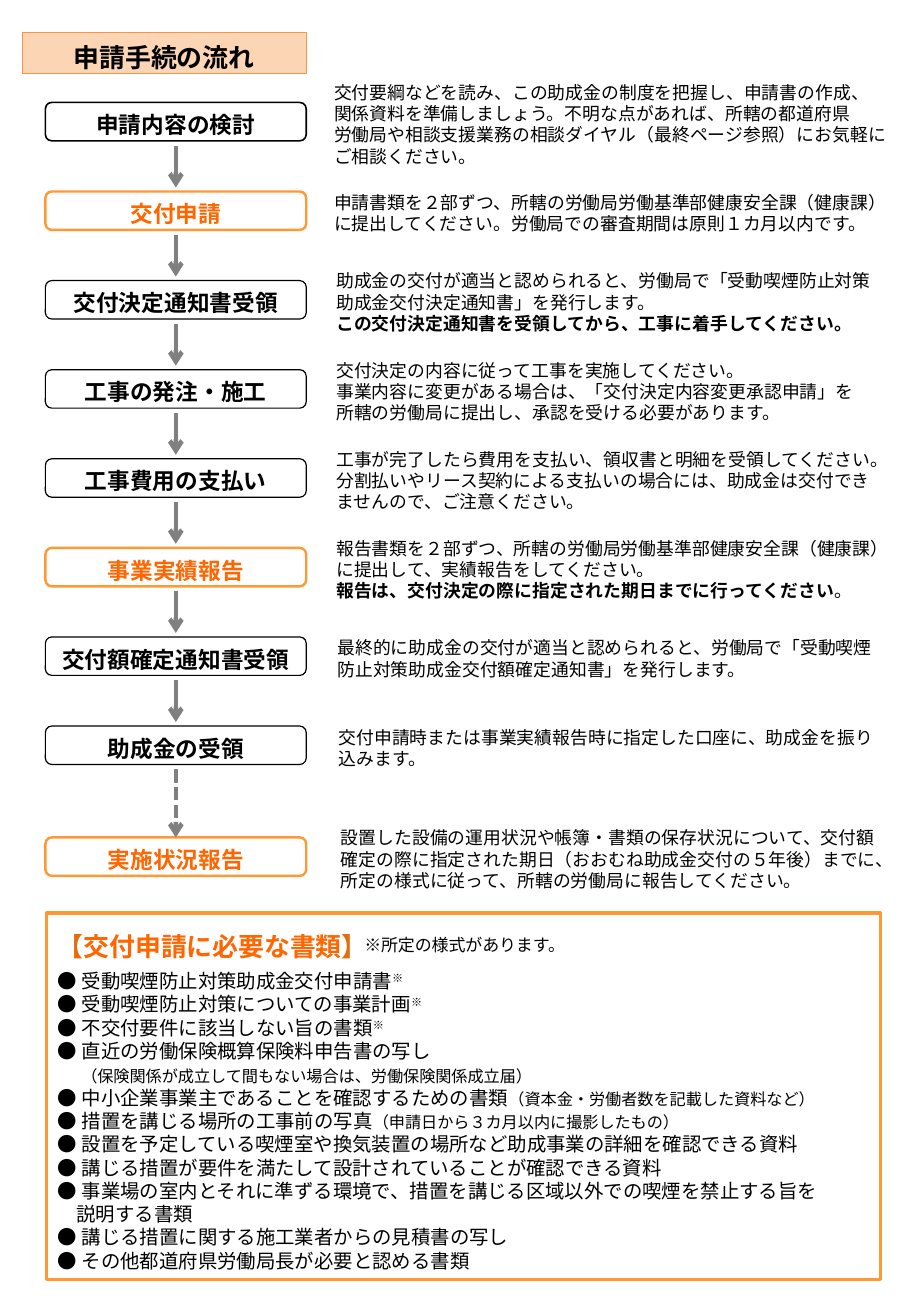
from lxml import etree
from pptx import Presentation, util as u
from pptx.dml.color import RGBColor
from pptx.enum import dml, lang, shapes, text
from pptx.oxml import ns

FONT = "Noto Sans CJK JP"
PAGE_W, PAGE_H = u.Pt(567), u.Pt(813.63)
LINE_PITCH = 1.2
BLACK, ORANGE, AMBER, RUST = "000000", "FF6600", "FF9933", "E46C0A"
STEP_PITCH, STEP_H = 0.765, 0.33
BOLD = {"bold": True}
SMALL = {"size": 10}
RAISED = {"raised": True}

STEPS = [
    ("申請内容の検討", False, 0, 2.77, 4, [
        "交付要綱などを読み、この助成金の制度を把握し、申請書の作成、",
        "関係資料を準備しましょう。不明な点があれば、所轄の都道府県",
        "労働局や相談支援業務の相談ダイヤル（最終ページ参照）にお気軽にご相談ください。"]),
    ("交付申請", True, 1, 2.77, 2, [
        "申請書類を２部ずつ、所轄の労働局労働基準部健康安全課（健康課）"
        "に提出してください。労働局での審査期間は原則１カ月以内です。"]),
    ("交付決定通知書受領", False, 2, 2.79, 3, [
        "助成金の交付が適当と認められると、労働局で「受動喫煙防止対策",
        "助成金交付決定通知書」を発行します。",
        [("この交付決定通知書を受領してから、工事に着手してください。", BOLD)]]),
    ("工事の発注・施工", False, 3, 2.79, 3, [
        "交付決定の内容に従って工事を実施してください。",
        "事業内容に変更がある場合は、「交付決定内容変更承認申請」を",
        "所轄の労働局に提出し、承認を受ける必要があります。"]),
    ("工事費用の支払い", False, 4, 2.79, 3, [
        "工事が完了したら費用を支払い、領収書と明細を受領してください。",
        "分割払いやリース契約による支払いの場合には、助成金は交付でき",
        "ませんので、ご注意ください。"]),
    ("事業実績報告", True, 5, 2.79, 3, [
        "報告書類を２部ずつ、所轄の労働局労働基準部健康安全課（健康課）"
        "に提出して、実績報告をしてください。",
        [("報告は、交付決定の際に指定された期日までに行ってください", BOLD), ("。", {})]]),
    ("交付額確定通知書受領", False, 6, 2.8, 2, [
        "最終的に助成金の交付が適当と認められると、労働局で「受動喫煙",
        "防止対策助成金交付額確定通知書」を発行します。"]),
    ("助成金の受領", False, 7, 2.81, 2, [
        "交付申請時または事業実績報告時に指定した口座に、助成金を振り",
        "込みます。"]),
    ("実施状況報告", True, 8.25, 2.83, 3, [
        "設置した設備の運用状況や帳簿・書類の保存状況について、交付額",
        "確定の際に指定された期日（おおむね助成金交付の５年後）までに、"
        "所定の様式に従って、所轄の労働局に報告してください。"]),
]

HEADING = [("【", {"color": RUST}), ("交付申請に必要な書類", {"color": ORANGE}),
           ("】", {"color": RUST})]
DOCUMENTS = [
    (0, [("● 受動喫煙防止対策助成金交付申請書", {}), ("※", RAISED)]),
    (0, [("● 受動喫煙防止対策についての事業計画", {}), ("※", RAISED)]),
    (0, [("● 不交付要件に該当しない旨の書類", {}), ("※", RAISED)]),
    (0, "● 直近の労働保険概算保険料申告書の写し"),
    (0.2, [("（保険関係が成立して間もない場合は、労働保険関係成立届）", SMALL)]),
    (0, [("● 中小企業事業主であることを確認するための書類", {}),
         ("（資本金・労働者数を記載した資料など）", SMALL)]),
    (0, [("● 措置を講じる場所の工事前の写真", {}),
         ("（申請日から３カ月以内に撮影したもの）", SMALL)]),
    (0, "● 設置を予定している喫煙室や換気装置の場所など助成事業の詳細を確認できる資料"),
    (0, "● 講じる措置が要件を満たして設計されていることが確認できる資料"),
    (0, "● 事業場の室内とそれに準ずる環境で、措置を講じる区域以外での喫煙を禁止する旨を"),
    (0.16, "説明する書類"),
    (0, "● 講じる措置に関する施工業者からの見積書の写し"),
    (0, "● その他都道府県労働局長が必要と認める書類"),
]


def rgb(value):
    """Turn a hex string into a colour."""
    return RGBColor.from_string(value)


def write(paragraph, content, size, color=BLACK, bold=False):
    """Fill a paragraph with a string or with (text, style) runs."""
    pieces = [(content, {})] if isinstance(content, str) else content
    paragraph.line_spacing = u.Pt(size * LINE_PITCH)
    for words, style in pieces:
        run = paragraph.add_run()
        run.text = words
        run.font.size = u.Pt(style.get("size", size))
        run.font.bold = style.get("bold", bold)
        run.font.color.rgb = rgb(style.get("color", color))
        run.font.name = FONT
        run.font.language_id = lang.MSO_LANGUAGE_ID.JAPANESE
        props = run.font._element
        props.find(ns.qn("a:latin")).addnext(
            etree.Element(ns.qn("a:ea"), typeface=FONT))
        if style.get("raised"):
            props.set("baseline", "30000")


def prepare(holder, top, bottom):
    """Set wrapping, insets and middle anchoring, and return the frame."""
    frame = holder.text_frame
    frame.word_wrap = True
    frame.vertical_anchor = text.MSO_ANCHOR.MIDDLE
    frame.margin_left = frame.margin_right = u.Inches(0.1)
    frame.margin_top, frame.margin_bottom = u.Inches(top), u.Inches(bottom)
    return frame


def add_panel(slide, kind, box, line, weight, fill=None):
    """Draw an outlined shape in the box."""
    panel = slide.shapes.add_shape(kind, *map(u.Inches, box))
    panel.shadow.inherit = False
    panel.line.color.rgb = rgb(line)
    panel.line.width = u.Pt(weight)
    if fill:
        panel.fill.solid()
        panel.fill.fore_color.rgb = rgb(fill)
    else:
        panel.fill.background()
    return panel


def add_label(panel, words, size, color, top):
    """Write a bold centred label in a shape."""
    label = prepare(panel, top, 0).paragraphs[0]
    label.alignment = text.PP_ALIGN.CENTER
    write(label, words, size, color, True)


def add_note(slide, box, paragraphs, size):
    """Write plain paragraphs centred on the height of the box."""
    frame = prepare(slide.shapes.add_textbox(*map(u.Inches, box)), 0.05, 0.05)
    for index, content in enumerate(paragraphs):
        write(frame.add_paragraph() if index else frame.paragraphs[0], content, size)


def add_arrow(slide, x, top, bottom, target=None):
    """Draw a grey arrow downwards, dashed if it joins a target."""
    arrow = slide.shapes.add_connector(
        shapes.MSO_CONNECTOR.STRAIGHT, *map(u.Inches, (x, top, x, bottom)))
    arrow.line.color.rgb = rgb("808080")
    arrow.line.width = u.Pt(2.75)
    if target is not None:
        arrow.line.dash_style = dml.MSO_LINE.SQUARE_DOT
        arrow.end_connect(target, 0)
    etree.SubElement(arrow.line._get_or_add_ln(), ns.qn("a:tailEnd"), type="arrow")
    etree.SubElement(arrow._element.spPr, ns.qn("a:effectLst"))


def add_title(slide, box):
    """Draw the title band."""
    band = add_panel(slide, shapes.MSO_SHAPE.RECTANGLE, box, "F79646", 0.75, "FCD5B5")
    add_label(band, "申請手続の流れ", 16, BLACK, 0.08)


def add_flow(slide, box):
    """Draw the steps, their notes and the arrows between them."""
    left, top, width, step_width = box
    for index, (name, applicant, row, note_left, lines, note) in enumerate(STEPS):
        y = top + row * STEP_PITCH
        step = add_panel(slide, shapes.MSO_SHAPE.ROUNDED_RECTANGLE,
                         (left, y, step_width, STEP_H),
                         AMBER if applicant else BLACK,
                         1.5 if applicant else 0.75 if index else 1)
        add_label(step, name, 14, ORANGE if applicant else BLACK, 0.05)
        height = 0.1 + lines * 11 * LINE_PITCH / 72
        add_note(slide, (note_left, y + STEP_H / 2 + 0.02 - height / 2,
                         left + width - note_left, height), note, 11)
        if index:
            start = top + STEPS[index - 1][2] * STEP_PITCH + STEP_H + 0.04
            last = index == len(STEPS) - 1
            add_arrow(slide, left + step_width / 2, start,
                      y if last else start + 0.36, step if last else None)


def add_documents(slide, box):
    """Draw the framed list of required documents."""
    left, top, _, _ = box
    panel = add_panel(slide, shapes.MSO_SHAPE.RECTANGLE, box, AMBER, 2, "FFFFFF")
    frame = prepare(panel, 0.08, 0)
    heading = frame.paragraphs[0]
    heading.alignment = text.PP_ALIGN.LEFT
    write(heading, HEADING, 16, bold=True)
    heading.space_after = u.Pt(5)
    for indent, content in DOCUMENTS:
        entry = frame.add_paragraph()
        entry.alignment = text.PP_ALIGN.LEFT
        write(entry, content, 12)
        entry._p.get_or_add_pPr().set("marL", str(u.Inches(indent)))
    add_note(slide, (left + 2.63, top + 0.13, 2.12, 0.29),
             ["※所定の様式があります。"], 10.5)


def main():
    """Build the page and save it."""
    deck = Presentation()
    deck.slide_width, deck.slide_height = PAGE_W, PAGE_H
    slide = deck.slides.add_slide(deck.slide_layouts[6])
    add_title(slide, (0.19, 0.28, 2.44, 0.35))
    add_flow(slide, (0.39, 0.88, 7.39, 2.24))
    add_documents(slide, (0.4, 7.84, 7.16, 3.15))
    deck.save("out.pptx")


if __name__ == "__main__":
    main()
